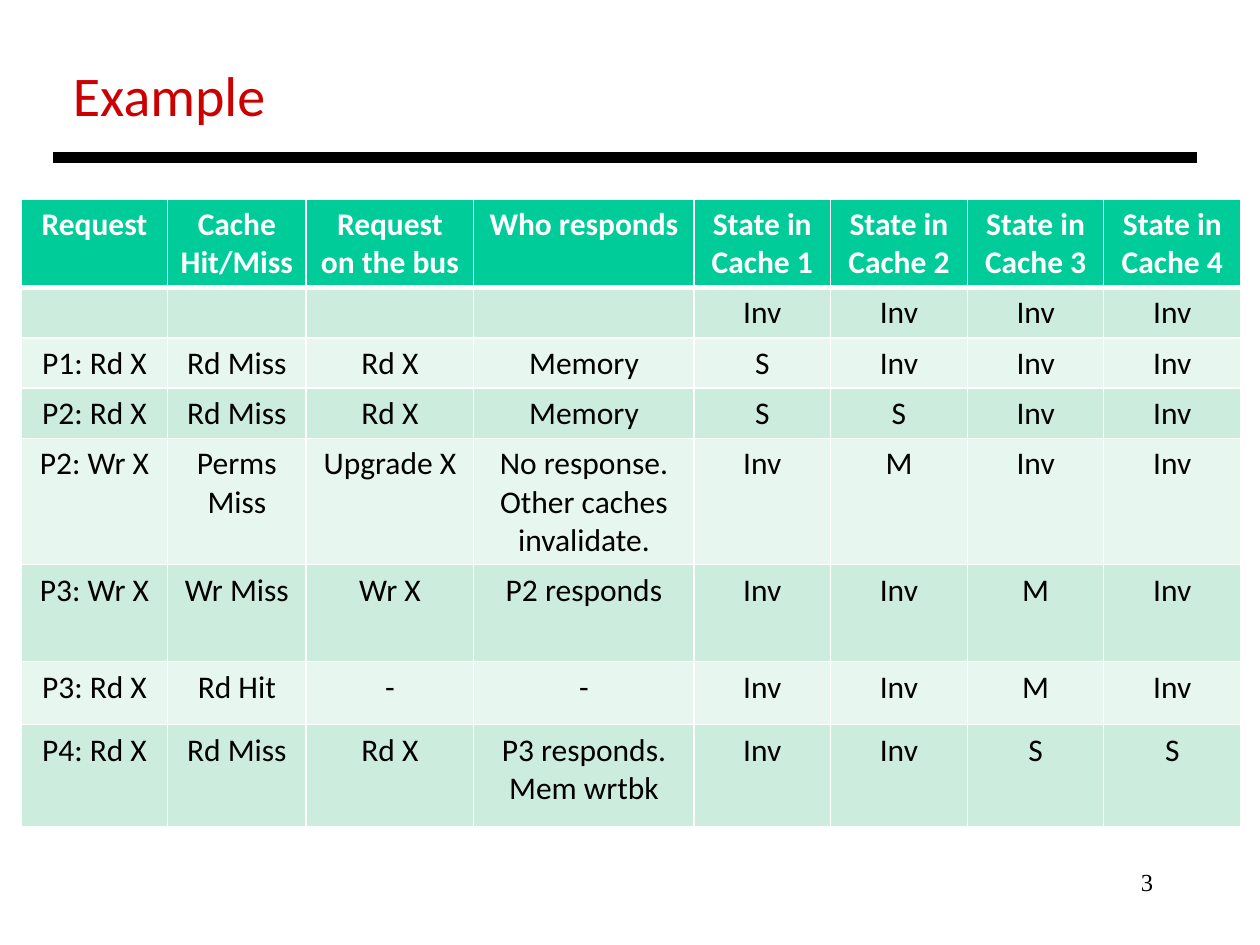
from lxml import etree
from pptx import Presentation
from pptx.dml.color import RGBColor
from pptx.enum.shapes import MSO_CONNECTOR
from pptx.enum.text import PP_ALIGN
from pptx.oxml.ns import qn
from pptx.util import Inches, Pt

LEFT, CENTER, RIGHT = PP_ALIGN.LEFT, PP_ALIGN.CENTER, PP_ALIGN.RIGHT
STRAIGHT = MSO_CONNECTOR.STRAIGHT

BLACK = RGBColor(0x00, 0x00, 0x00)
WHITE = RGBColor(0xFF, 0xFF, 0xFF)
RED = RGBColor(0xCC, 0x00, 0x00)
GREEN = RGBColor(0x00, 0xCC, 0x99)
BANDS = [RGBColor(0xE7, 0xF6, 0xEF), RGBColor(0xCC, 0xEC, 0xDE)]

COLUMN_WIDTHS = [1.16, 1.1, 1.33, 1.75] + [1.08, 1.09] * 2
ROW_HEIGHTS = [0.7, 0.4, 0.4, 0.4, 1, 0.77, 0.5, 0.81]
ROWS = [
    ["Request", "Cache\nHit/Miss", "Request\non the bus", "Who responds"]
    + [f"State in Cache {number}" for number in range(1, 5)],
    ["", "", "", "", "Inv", "Inv", "Inv", "Inv"],
    ["P1: Rd X", "Rd Miss", "Rd X", "Memory", "S", "Inv", "Inv", "Inv"],
    ["P2: Rd X", "Rd Miss", "Rd X", "Memory", "S", "S", "Inv", "Inv"],
    ["P2: Wr X", "Perms Miss", "Upgrade X",
     "No response.\nOther caches invalidate.", "Inv", "M", "Inv", "Inv"],
    ["P3: Wr X", "Wr Miss", "Wr X", "P2 responds", "Inv", "Inv", "M", "Inv"],
    ["P3: Rd X", "Rd Hit", "-", "-", "Inv", "Inv", "M", "Inv"],
    ["P4: Rd X", "Rd Miss", "Rd X", "P3 responds. Mem wrtbk",
     "Inv", "Inv", "S", "S"],
]


def write(frame, text, size=18, font="Calibri", color=BLACK, bold=False, align=LEFT):
    frame.text = text
    for para in frame.paragraphs:
        para.alignment = align
        para.font.size = Pt(size)
        for span in para.runs:
            span.font.size = Pt(size)
            span.font.name = font
            span.font.bold = bold
            span.font.color.rgb = color


def add_border(cell, side, width):
    line = etree.SubElement(cell._tc.get_or_add_tcPr(), qn(f"a:ln{side}"), w=str(Pt(width)))
    fill = etree.SubElement(line, qn("a:solidFill"))
    etree.SubElement(fill, qn("a:srgbClr"), val=str(WHITE))


deck = Presentation()
deck.slide_width = Inches(10)
deck.slide_height = Inches(7.5)
page = deck.slides.add_slide(deck.slide_layouts[6])

# Page number
box = page.shapes.add_textbox(Inches(7.17), Inches(6.83), Inches(2.08), Inches(0.5))
box.text_frame.word_wrap = True
write(box.text_frame, "3", size=14, font="Times New Roman", align=RIGHT)

# Title and the rule below it
box = page.shapes.add_textbox(Inches(0.48), Inches(0.43), Inches(1.75), Inches(0.64))
box.text_frame.word_wrap = False
write(box.text_frame, "Example", size=32, color=RED)

rule = page.shapes.add_connector(STRAIGHT, Inches(0.42), Inches(1.25), Inches(9.5), Inches(1.25))
rule.line.color.rgb = BLACK
rule.line.width = Pt(6)
etree.SubElement(rule._element.spPr, qn("a:effectLst"))

# Table of requests and cache states
table = page.shapes.add_table(
    len(ROWS), len(COLUMN_WIDTHS), Inches(0.17), Inches(1.58),
    Inches(sum(COLUMN_WIDTHS)), Inches(sum(ROW_HEIGHTS))).table
for column, width in zip(table.columns, COLUMN_WIDTHS):
    column.width = Inches(width)
for row, height in zip(table.rows, ROW_HEIGHTS):
    row.height = Inches(height)

for row_index, texts in enumerate(ROWS):
    header = row_index == 0
    for column_index, text in enumerate(texts):
        cell = table.cell(row_index, column_index)
        write(cell.text_frame, text, color=WHITE if header else BLACK,
              bold=header, align=CENTER)
        for side in "LRTB":
            below_header = (row_index, side) in [(0, "B"), (1, "T")]
            add_border(cell, side, 3 if below_header else 1)
        cell.fill.solid()
        cell.fill.fore_color.rgb = GREEN if header else BANDS[row_index % 2]

deck.save("out.pptx")
